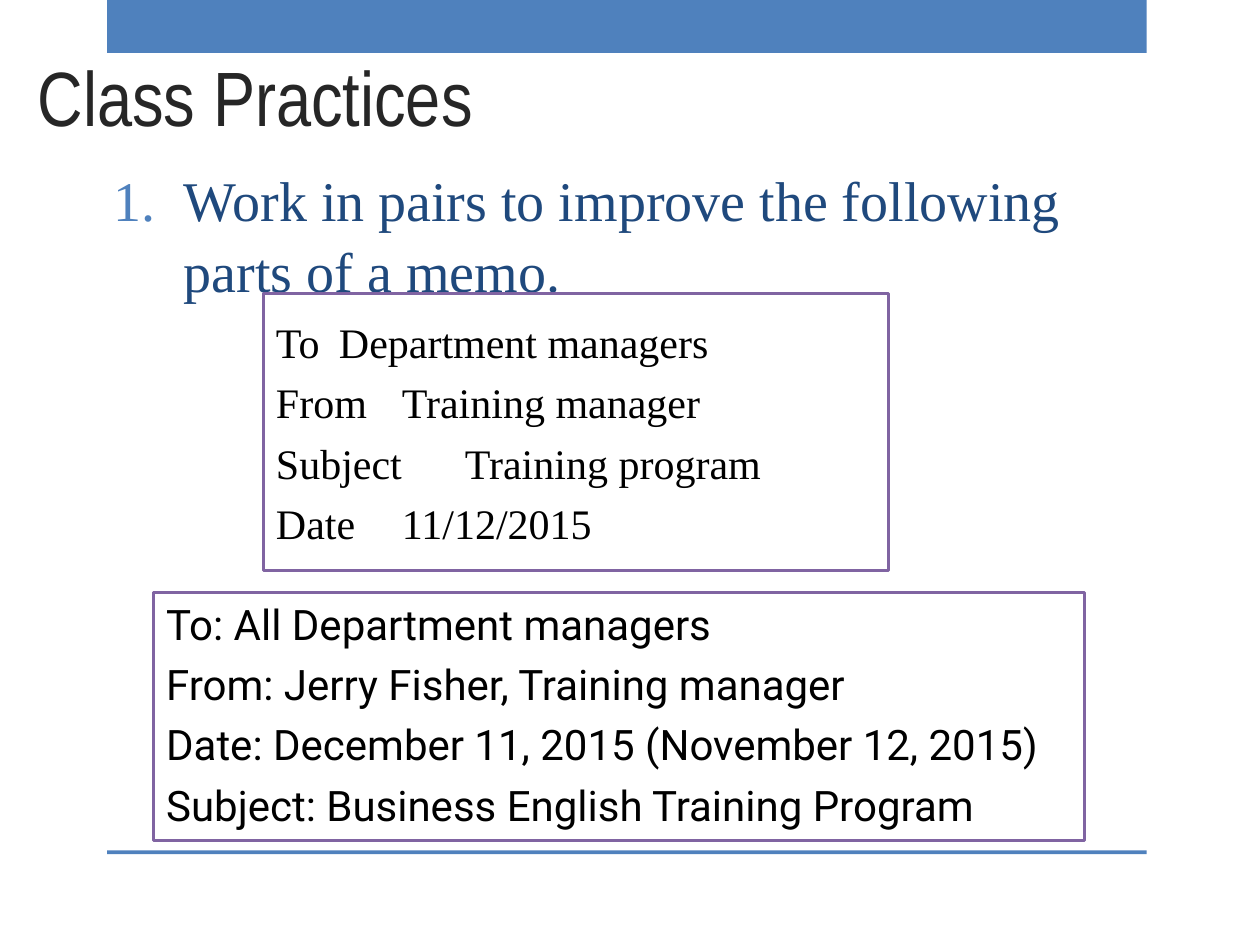
from dataclasses import dataclass

from lxml import etree
from pptx import Presentation
from pptx.dml.color import RGBColor
from pptx.enum.shapes import MSO_SHAPE
from pptx.enum.text import MSO_ANCHOR, MSO_AUTO_SIZE, PP_ALIGN
from pptx.oxml.ns import qn
from pptx.util import Inches, Pt

RECT = MSO_SHAPE.RECTANGLE
TOP, MIDDLE, BOTTOM = MSO_ANCHOR.TOP, MSO_ANCHOR.MIDDLE, MSO_ANCHOR.BOTTOM
LEFT = PP_ALIGN.LEFT
NO_FIT = MSO_AUTO_SIZE.NONE
TWO_CONTENT = 3

COLORS = {
    "paper": "FFFFFF",
    "bar": "4F81BD",
    "title": "262626",
    "task": "1F497D",
    "frame": "8064A2",
    "ink": "000000",
}


@dataclass
class Box:
    left: float
    top: float
    width: float
    height: float


BARS = [Box(0.85, 0, 8.25, 0.42), Box(0.85, 6.75, 8.25, 0.03)]
DRAFT = [
    "To\tDepartment managers",
    "From\tTraining manager",
    "Subject\tTraining program",
    "Date\t11/12/2015",
]
ANSWER = [
    "To: All Department managers",
    "From: Jerry Fisher, Training manager",
    "Date: December 11, 2015 (November 12, 2015)",
    "Subject: Business English Training Program",
]


def rgb(name: str) -> RGBColor:
    return RGBColor.from_string(COLORS[name])


def place(shape, box: Box) -> None:
    shape.left, shape.top = Inches(box.left), Inches(box.top)
    shape.width, shape.height = Inches(box.width), Inches(box.height)


def add_rect(slide, box: Box, fill: str):
    shape = slide.shapes.add_shape(RECT, 0, 0, 0, 0)
    place(shape, box)
    shape.shadow.inherit = False
    shape.fill.solid()
    shape.fill.fore_color.rgb = rgb(fill)
    shape.line.fill.background()
    return shape


def add_frame(shape) -> None:
    shape.fill.solid()
    shape.fill.fore_color.rgb = rgb("paper")
    shape.line.color.rgb = rgb("frame")
    shape.line.width = Pt(1.75)


def set_list(para, number: str = "", hang: float = 0, tab: float = 0) -> None:
    """Set the number (by its colour name), hanging indent and tab stop."""
    props = para._p.get_or_add_pPr()
    props.set("marL", str(Inches(hang)))
    props.set("indent", str(-Inches(hang)))
    if number:
        color = etree.SubElement(props, qn("a:buClr"))
        etree.SubElement(color, qn("a:srgbClr"), val=COLORS[number])
        etree.SubElement(props, qn("a:buFont"), typeface="Times New Roman")
        etree.SubElement(props, qn("a:buAutoNum"), type="arabicPeriod")
    else:
        etree.SubElement(props, qn("a:buNone"))
    if tab:
        stops = etree.SubElement(props, qn("a:tabLst"))
        etree.SubElement(stops, qn("a:tab"), pos=str(Inches(tab)), algn="l")


def write(shape, lines: list[str], *, font: str, size: float, color: str,
          anchor=TOP, inset: float = 0.05, before: float = 0,
          pitch: float = 1.0, **marks) -> None:
    frame = shape.text_frame
    frame.word_wrap = True
    frame.auto_size = NO_FIT
    frame.vertical_anchor = anchor
    frame.margin_top = Inches(inset)
    for i, line in enumerate(lines):
        para = frame.add_paragraph() if i else frame.paragraphs[0]
        para.alignment = LEFT
        para.line_spacing = pitch
        para.space_before = Pt(before)
        set_list(para, **marks)
        run = para.add_run()
        run.text = line
        run.font.name = font
        run.font.size = Pt(size)
        run.font.color.rgb = rgb(color)


def main() -> None:
    deck = Presentation()
    deck.slide_width, deck.slide_height = Inches(10), Inches(7.5)
    slide = deck.slides.add_slide(deck.slide_layouts[TWO_CONTENT])
    slide.background.fill.solid()
    slide.background.fill.fore_color.rgb = rgb("paper")
    title, task, draft = slide.placeholders

    for bar in BARS:
        add_rect(slide, bar, "bar")

    place(title, Box(0.2, 0.52, 8.16, 0.66))
    write(title, ["Class Practices"], font="Arial Narrow", size=44,
          color="title", anchor=BOTTOM)

    place(task, Box(0.8, 1.28, 8.45, 1.45))
    write(task, ["Work in pairs to improve the following parts of a memo."],
          font="Times New Roman", size=32, color="task", inset=0.01,
          pitch=1.05, number="bar", hang=0.56)

    place(draft, Box(2.09, 2.33, 4.96, 2.2))
    add_frame(draft)
    write(draft, DRAFT, font="Times New Roman", size=24, color="ink",
          anchor=MIDDLE, before=5.8, tab=1.2)

    answer = add_rect(slide, Box(1.22, 4.7, 7.39, 1.97), "paper")
    add_frame(answer)
    write(answer, ANSWER, font="Roboto", size=24, color="ink", before=5.6)

    deck.save("out.pptx")


if __name__ == "__main__":
    main()
